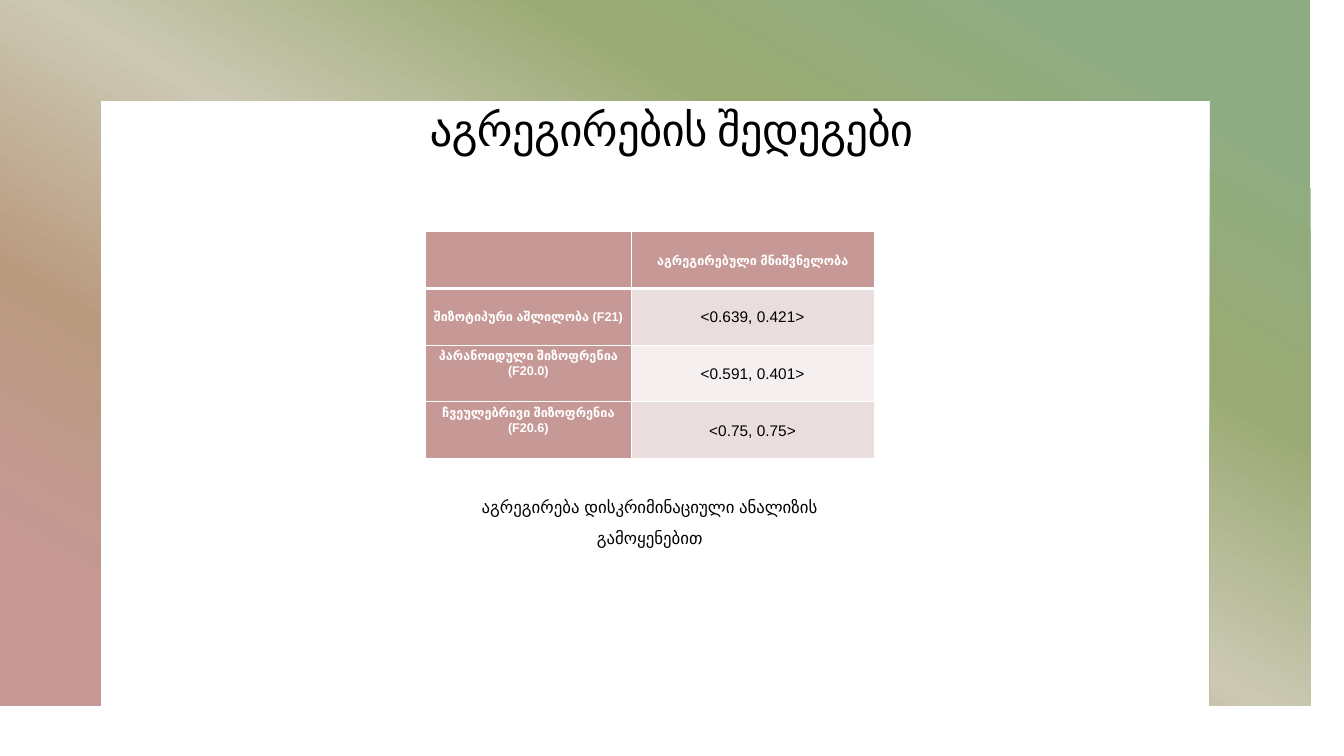
import pptx
import pptx.util
import pptx.dml.color
import pptx.enum.text
import pptx.oxml
import pptx.oxml.ns
from lxml import etree

# Content
TITLE = "აგრეგირების შედეგები"
CAPTION = "აგრეგირება დისკრიმინაციული ანალიზის გამოყენებით"
RESULTS = [
    ("", "აგრეგირებული მნიშვნელობა"),
    ("შიზოტიპური აშლილობა (F21)", "<0.639, 0.421>"),
    ("პარანოიდული შიზოფრენია (F20.0)", "<0.591, 0.401>"),
    ("ჩვეულებრივი შიზოფრენია (F20.6)", "<0.75, 0.75>"),
]
COLORS = {"text": "000000", "white": "FFFFFF", "header": "C69896",
          "odd": "EADDDD", "even": "F5EFEF"}
FRAME_STOPS = [(10, "8EAC82"), (30, "9AAA74"), (50, "CBC8B3"),
               (70, "BA9A7F"), (90, "C69896")]
FRAME_ANGLE = 120

# Layout in inches
WIDTH, HEIGHT = 13.33, 7.5
FRAME_BOTTOM, FRAME_BORDER = 6.68, 0.84
TITLE_BOX = (1.66, 0.9, 10, 0.81)
TABLE_LEFT, TABLE_TOP = 4.22, 2.3
COLUMN_WIDTHS = (2.04, 2.41)
ROW_HEIGHT = 0.5625
CAPTION_BOX = (4.63, 4.79, 3.63, 0.68)

Inches, Pt = pptx.util.Inches, pptx.util.Pt
ALIGN, ANCHOR = pptx.enum.text.PP_ALIGN, pptx.enum.text.MSO_ANCHOR
qn = pptx.oxml.ns.qn


def rgb(name):
    return pptx.dml.color.RGBColor.from_string(COLORS[name])


def write(frame, text, size, color="text", font="Arial", bold=False,
          line_spacing=1.0, tracking=0):
    frame.word_wrap = True
    paragraph = frame.paragraphs[0]
    paragraph.alignment = ALIGN.CENTER
    paragraph.line_spacing = line_spacing
    run = paragraph.add_run()
    run.text = text
    run.font.size, run.font.name, run.font.bold = Pt(size), font, bold
    run.font.color.rgb = rgb(color)
    if tracking:
        run._r.get_or_add_rPr().set("spc", str(int(tracking * 100)))


def add_text(slide, box, text, **style):
    frame = slide.shapes.add_textbox(*map(Inches, box)).text_frame
    frame.vertical_anchor = ANCHOR.MIDDLE
    write(frame, text, **style)


def add_frame(slide):
    inner_right = WIDTH - FRAME_BORDER
    outline = [(WIDTH, 0), (WIDTH, FRAME_BOTTOM), (inner_right, FRAME_BOTTOM),
               (inner_right, FRAME_BORDER), (FRAME_BORDER, FRAME_BORDER),
               (FRAME_BORDER, FRAME_BOTTOM), (0, FRAME_BOTTOM)]
    builder = slide.shapes.build_freeform(0, 0, scale=Inches(1))
    builder.add_line_segments(outline, close=True)
    frame = builder.convert_to_shape()
    frame.shadow.inherit = False
    frame.line.fill.background()
    frame.fill.gradient()
    frame.fill.gradient_angle = 360 - FRAME_ANGLE
    stops = frame._element.spPr.find(".//" + qn("a:gsLst"))
    for stop in list(stops):
        stops.remove(stop)
    for percent, color in FRAME_STOPS:
        stop = etree.SubElement(stops, qn("a:gs"), pos=str(percent * 1000))
        etree.SubElement(stop, qn("a:srgbClr"), val=color)


def set_borders(cell, widths):
    properties = cell._tc.get_or_add_tcPr()
    for index, (side, width) in enumerate(widths.items()):
        line = etree.Element(qn("a:ln" + side), w=str(Pt(width)))
        fill = etree.SubElement(line, qn("a:solidFill"))
        etree.SubElement(fill, qn("a:srgbClr"), val=COLORS["white"])
        properties.insert(index, line)


def add_results(slide):
    table = slide.shapes.add_table(
        len(RESULTS), len(COLUMN_WIDTHS), Inches(TABLE_LEFT), Inches(TABLE_TOP),
        Inches(sum(COLUMN_WIDTHS)), Inches(ROW_HEIGHT * len(RESULTS))).table
    for column, width in zip(table.columns, COLUMN_WIDTHS):
        column.width = Inches(width)
    for r, labels in enumerate(RESULTS):
        table.rows[r].height = Inches(ROW_HEIGHT)
        for c, label in enumerate(labels):
            cell = table.cell(r, c)
            heading = r == 0 or c == 0
            # Two-line diagnoses sit at the top of their cells
            wrapped = c == 0 and r > 1
            cell.vertical_anchor = ANCHOR.TOP if wrapped else ANCHOR.MIDDLE
            cell.margin_left = cell.margin_right = Inches(0.07)
            cell.margin_top = Inches(0.03 if wrapped else 0)
            cell.margin_bottom = 0
            cell.fill.solid()
            cell.fill.fore_color.rgb = rgb(
                "header" if heading else "odd" if r % 2 else "even")
            set_borders(cell, {"L": 1, "R": 1, "T": 3 if r == 1 else 1,
                               "B": 3 if r == 0 else 1})
            if label:
                write(cell.text_frame, label, size=9 if heading else 11,
                      color="white" if heading else "text", bold=heading,
                      line_spacing=1.07)


def main():
    deck = pptx.Presentation()
    deck.slide_width, deck.slide_height = Inches(WIDTH), Inches(HEIGHT)
    slide = deck.slides.add_slide(deck.slide_layouts[6])
    add_frame(slide)
    add_text(slide, TITLE_BOX, TITLE, size=32, font="Lato",
             line_spacing=0.95, tracking=-0.5)
    add_results(slide)
    add_text(slide, CAPTION_BOX, CAPTION, size=12, line_spacing=1.5)
    deck.save("out.pptx")


if __name__ == "__main__":
    main()
